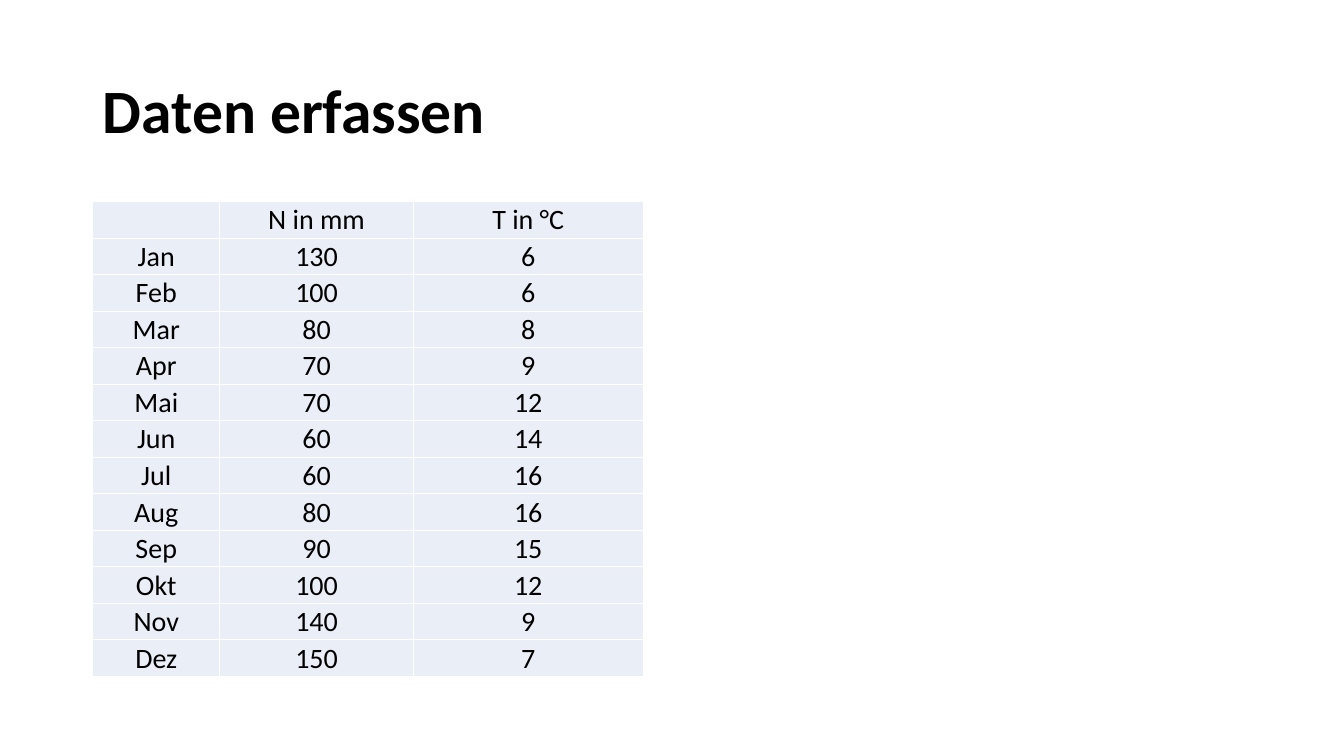
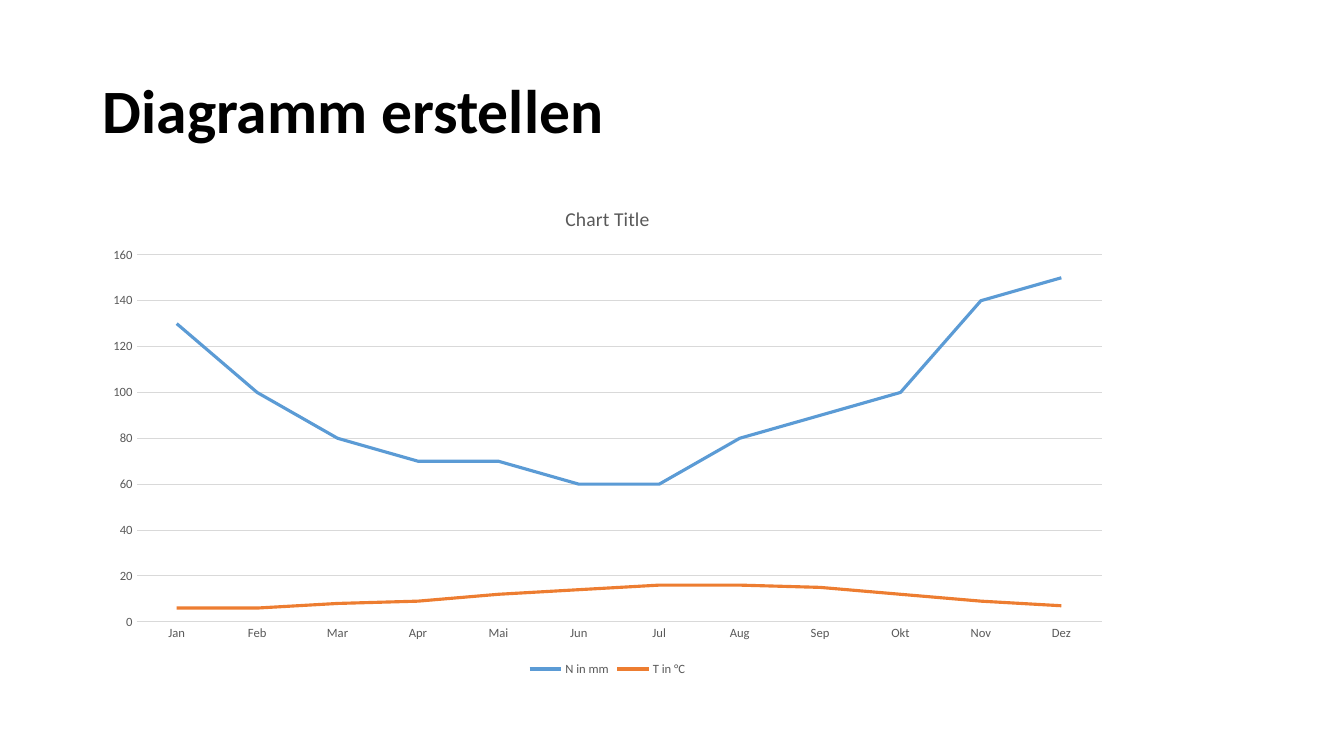
from dataclasses import dataclass
from typing import Any

from lxml import etree
from pptx import Presentation
from pptx.chart.data import CategoryChartData
from pptx.dml.color import RGBColor
from pptx.enum.chart import XL_CHART_TYPE, XL_LEGEND_POSITION, XL_TICK_MARK
from pptx.enum.text import MSO_ANCHOR, MSO_AUTO_SIZE, PP_ALIGN
from pptx.oxml.ns import qn
from pptx.util import Inches, Pt

LINE_CHART = XL_CHART_TYPE.LINE
BOTTOM = XL_LEGEND_POSITION.BOTTOM
NO_TICK = XL_TICK_MARK.NONE
MIDDLE = MSO_ANCHOR.MIDDLE
NO_FIT = MSO_AUTO_SIZE.NONE
LEFT, CENTER = PP_ALIGN.LEFT, PP_ALIGN.CENTER

FONT = "Calibri"
TITLE_ONLY = 5
COLORS = {
    "text": "000000",
    "muted": "595959",
    "grid": "D9D9D9",
    "cell": "EAEFF7",
    "border": "FFFFFF",
    "rain": "5B9BD5",
    "temp": "ED7D31",
}


@dataclass(frozen=True)
class Box:
    left: float
    top: float
    width: float
    height: float

    def lengths(self) -> tuple:
        return tuple(Inches(v) for v in (self.left, self.top, self.width, self.height))


@dataclass(frozen=True)
class Series:
    name: str
    color: str
    values: tuple


TITLE_BOX = Box(0.92, 0.4, 11.5, 1.45)
TABLE_BOX = Box(0.92, 2, 5.46, 4.71)
CHART_BOX = Box(0.92, 1.85, 10.21, 4.9)
COL_WIDTHS = (1.26, 1.92, 2.28)
MONTHS = ("Jan", "Feb", "Mar", "Apr", "Mai", "Jun",
          "Jul", "Aug", "Sep", "Okt", "Nov", "Dez")
CLIMATE = (
    Series("N in mm", "rain", (130, 100, 80, 70, 70, 60, 60, 80, 90, 100, 140, 150)),
    Series("T in °C", "temp", (6, 6, 8, 9, 12, 14, 16, 16, 15, 12, 9, 7)),
)


def rgb(name: str) -> RGBColor:
    return RGBColor.from_string(COLORS[name])


def set_attrs(obj: Any, attrs: dict) -> None:
    for name, value in attrs.items():
        setattr(obj, name, value)


def style_font(font: Any, size: float, color: str = "text", bold: bool = False) -> None:
    set_attrs(font, {"name": FONT, "size": Pt(size), "bold": bold})
    font.color.rgb = rgb(color)


def style_line(line: Any, color: str, width: float) -> None:
    line.color.rgb = rgb(color)
    line.width = Pt(width)


def add_titled_slide(prs: Any, title: str) -> Any:
    slide = prs.slides.add_slide(prs.slide_layouts[TITLE_ONLY])
    sp = slide.shapes.title
    set_attrs(sp, dict(zip(("left", "top", "width", "height"), TITLE_BOX.lengths())))
    tf = sp.text_frame
    tf.text = title
    set_attrs(tf, {"word_wrap": True, "auto_size": NO_FIT, "vertical_anchor": MIDDLE})
    p = tf.paragraphs[0]
    set_attrs(p, {"alignment": LEFT, "line_spacing": 0.9})
    style_font(p.runs[0].font, 44, bold=True)
    return slide


def add_borders(cell: Any, color: str, width: float) -> None:
    props = cell._tc.get_or_add_tcPr()
    for side in ("a:lnL", "a:lnR", "a:lnT", "a:lnB"):
        ln = etree.SubElement(props, qn(side), w=str(Pt(width)))
        fill = etree.SubElement(ln, qn("a:solidFill"))
        etree.SubElement(fill, qn("a:srgbClr"), val=COLORS[color])


def fill_cell(cell: Any, text: str) -> None:
    inset = Inches(0.01)
    set_attrs(cell, {"margin_left": inset, "margin_right": inset, "margin_top": inset,
                     "margin_bottom": 0, "vertical_anchor": MIDDLE})
    add_borders(cell, "border", 1)
    cell.fill.solid()
    cell.fill.fore_color.rgb = rgb("cell")
    if text:
        p = cell.text_frame.paragraphs[0]
        p.alignment = CENTER
        r = p.add_run()
        r.text = text
        style_font(r.font, 20)


def add_climate_table(slide: Any) -> None:
    rows = [("", *(s.name for s in CLIMATE)),
            *zip(MONTHS, *(s.values for s in CLIMATE))]
    table = slide.shapes.add_table(len(rows), len(COL_WIDTHS), *TABLE_BOX.lengths()).table
    set_attrs(table, {"first_row": False, "horz_banding": False})
    for column, width in zip(table.columns, COL_WIDTHS):
        column.width = Inches(width)
    for i, row in enumerate(rows):
        table.rows[i].height = Inches(TABLE_BOX.height / len(rows))
        for j, value in enumerate(row):
            fill_cell(table.cell(i, j), str(value))


def add_climate_chart(slide: Any) -> None:
    data = CategoryChartData()
    data.categories = MONTHS
    for s in CLIMATE:
        data.add_series(s.name, s.values)
    chart = slide.shapes.add_chart(LINE_CHART, *CHART_BOX.lengths(), data).chart
    style_font(chart.font, 10)

    chart.has_title = True
    tf = chart.chart_title.text_frame
    tf.text = "Chart Title"
    style_font(tf.paragraphs[0].runs[0].font, 14, "muted")
    chart.chart_title.include_in_layout = False

    chart.has_legend = True
    set_attrs(chart.legend, {"position": BOTTOM, "include_in_layout": False})
    style_font(chart.legend.font, 9, "muted")

    for axis in (chart.category_axis, chart.value_axis):
        set_attrs(axis, {"major_tick_mark": NO_TICK, "minor_tick_mark": NO_TICK})
        style_font(axis.tick_labels.font, 9, "muted")
    style_line(chart.category_axis.format.line, "grid", 0.75)
    chart.value_axis.format.line.fill.background()
    chart.value_axis.has_major_gridlines = True
    style_line(chart.value_axis.major_gridlines.format.line, "grid", 0.75)

    plot = chart.plots[0]
    plot.vary_by_categories = False
    for line, s in zip(plot.series, CLIMATE):
        line.smooth = False
        style_line(line.format.line, s.color, 2.25)


def main() -> None:
    prs = Presentation()
    set_attrs(prs, {"slide_width": Inches(13.33), "slide_height": Inches(7.5)})
    add_climate_table(add_titled_slide(prs, "Daten erfassen"))
    add_climate_chart(add_titled_slide(prs, "Diagramm erstellen"))
    prs.save("out.pptx")


if __name__ == "__main__":
    main()
